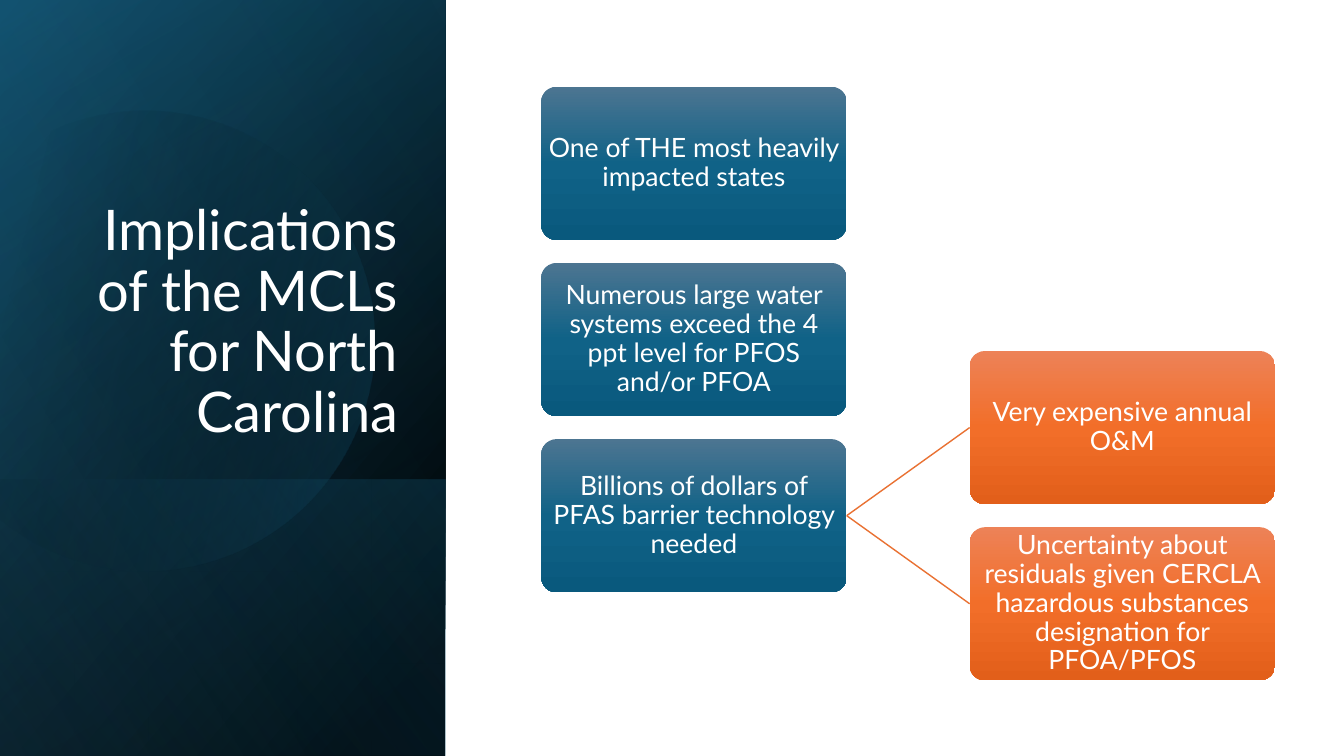
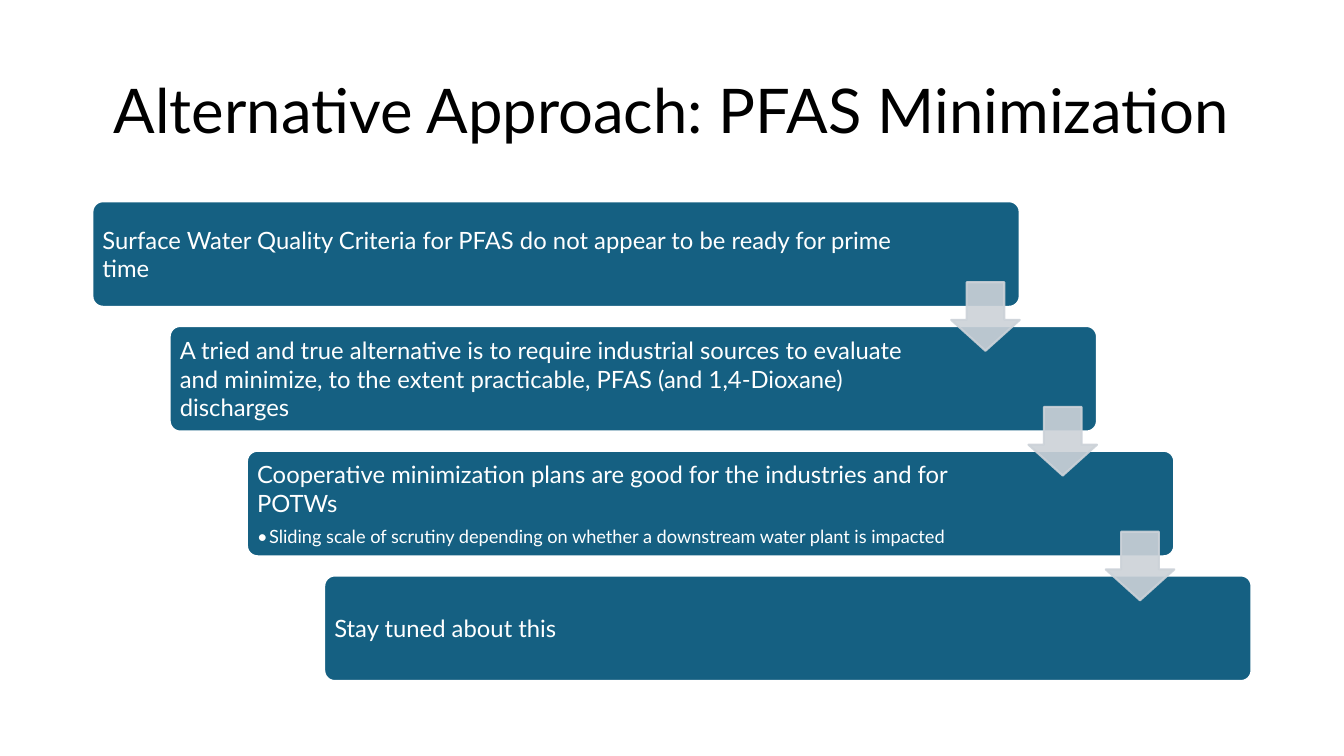
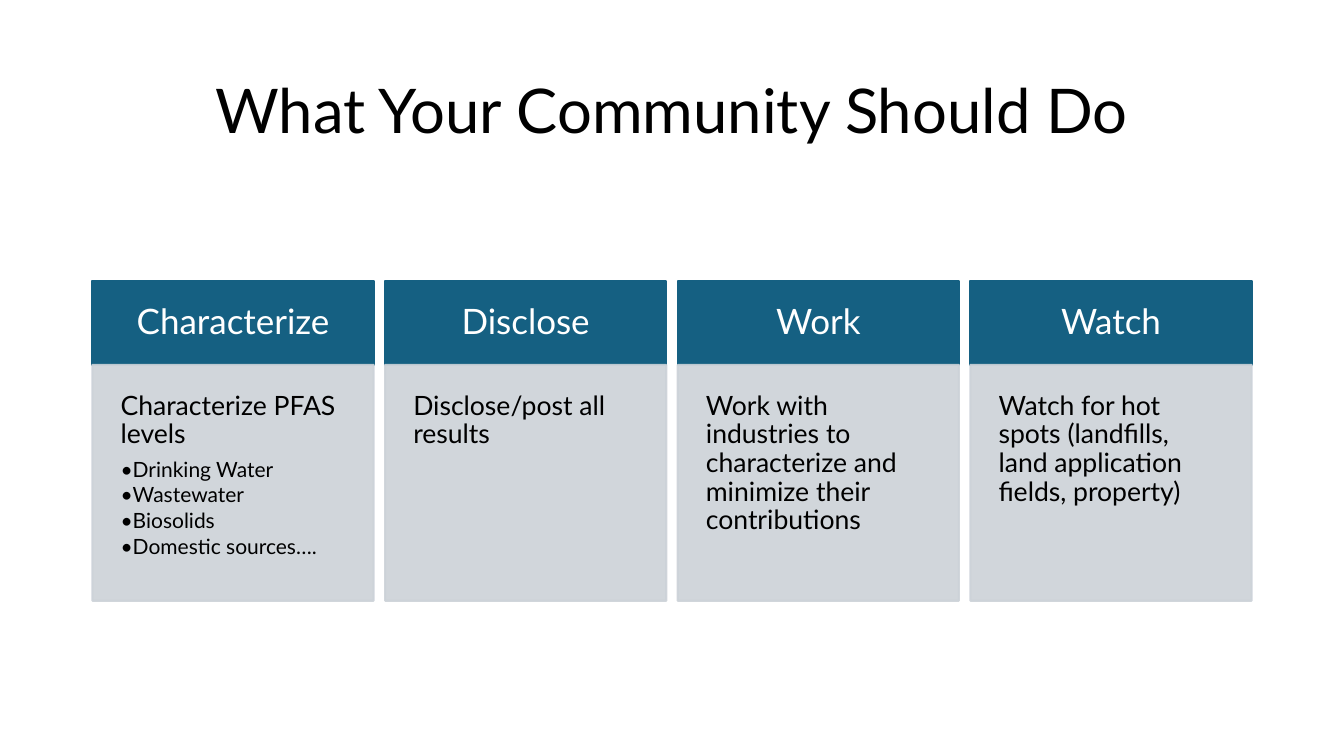
from dataclasses import dataclass

from lxml import etree
from pptx import Presentation
from pptx import oxml as ox
from pptx import util as u
from pptx.dml import color as col
from pptx.enum import shapes as sh
from pptx.enum import text as tx
from pptx.oxml import ns

ALIGN = {"l": tx.PP_ALIGN.LEFT, "c": tx.PP_ALIGN.CENTER, "r": tx.PP_ALIGN.RIGHT}
ANCHOR = {"t": tx.MSO_ANCHOR.TOP, "m": tx.MSO_ANCHOR.MIDDLE, "b": tx.MSO_ANCHOR.BOTTOM}
RECT = sh.MSO_SHAPE.RECTANGLE
ROUND = sh.MSO_SHAPE.ROUNDED_RECTANGLE
ARROW = sh.MSO_SHAPE.DOWN_ARROW
CHORD = sh.MSO_SHAPE.CHORD
WIDTH = 40 / 3
SPAN = 11.5
EDGE = (WIDTH - SPAN) / 2


@dataclass(frozen=True)
class Theme:
    font: str = "Lato"
    white: str = "FFFFFF"
    black: str = "000000"
    blue: str = "156082"
    navy: str = "104862"
    sky: str = "46B1E1"
    gray: str = "CCD2D8"
    orange: str = "E97132"
    blues: tuple = ((0, "4C7591"), (50, "106287"), (100, "09597D"))
    warms: tuple = ((0, "ED8257"), (50, "F26E29"), (100, "E25F1A"))
    title: int = 44
    side: int = 40
    head: int = 25
    body: int = 19
    step: int = 17
    sub: int = 15
    note: int = 13


T = Theme()


def rgb(code):
    return col.RGBColor.from_string(code)


def fade(fill, alpha):
    for clr in fill._xPr.iter(ns.qn("a:srgbClr")):
        etree.SubElement(clr, ns.qn("a:alpha")).set("val", str(alpha * 1000))


def blend(shape, stops, angle):
    shape.fill.background()
    marks = "".join(
        f'<a:gs pos="{pos * 1000}"><a:srgbClr val="{code}">'
        f'<a:alpha val="{(alpha[0] if alpha else 100) * 1000}"/></a:srgbClr></a:gs>'
        for pos, code, *alpha in stops)
    grad = ox.parse_xml(
        f'<a:gradFill {ns.nsdecls("a")} rotWithShape="1"><a:gsLst>{marks}</a:gsLst>'
        f'<a:lin ang="{angle * 60000}" scaled="0"/></a:gradFill>')
    props = shape._element.spPr
    props.replace(props.find(ns.qn("a:noFill")), grad)


def put(frame, text, size, color=T.white, align="l", space=None, after=0, bullet=False):
    para = frame.paragraphs[0]
    if para.runs:
        para = frame.add_paragraph()
    para.alignment = ALIGN[align]
    para.space_before = u.Pt(0)
    para.space_after = u.Pt(round(size * after, 2))
    if space:
        para.line_spacing = space
    if bullet:
        props = para._p.get_or_add_pPr()
        props.set("marL", str(u.Inches(0.12)))
        props.set("indent", str(-u.Inches(0.12)))
        etree.SubElement(props, ns.qn("a:buFont")).set("typeface", T.font)
        etree.SubElement(props, ns.qn("a:buChar")).set("char", "•")
    run = para.add_run()
    run.text = text
    run.font.name = T.font
    run.font.size = u.Pt(size)
    run.font.color.rgb = rgb(color)


class Deck:
    def __init__(self):
        self.file = Presentation()
        self.file.slide_width = u.Inches(WIDTH)
        self.file.slide_height = u.Inches(7.5)

    def page(self):
        self.slide = self.file.slides.add_slide(self.file.slide_layouts[5])

    def frame(self, shape, inset, anchor):
        frame = shape.text_frame
        frame.word_wrap = True
        frame.auto_size = tx.MSO_AUTO_SIZE.NONE
        frame.vertical_anchor = ANCHOR[anchor]
        (frame.margin_left, frame.margin_top,
         frame.margin_right, frame.margin_bottom) = map(u.Inches, inset)
        return frame

    def title(self, text, at=(EDGE, 0.4, SPAN, 1.45), size=T.title, color=T.black,
              align="c", anchor="m"):
        hold = self.slide.shapes.title
        hold.left, hold.top, hold.width, hold.height = map(u.Inches, at)
        self.slide.shapes._spTree.append(hold._element)
        put(self.frame(hold, (0.1, 0.05, 0.1, 0.05), anchor), text, size, color, align, 0.9)

    def paint(self, shape, fill, line=None, alpha=100, angle=90):
        shape.shadow.inherit = False
        if isinstance(fill, str):
            shape.fill.solid()
            shape.fill.fore_color.rgb = rgb(fill)
        else:
            blend(shape, fill, angle)
        if line:
            shape.line.color.rgb = rgb(line)
            shape.line.width = u.Pt(1.5)
        else:
            shape.line.fill.background()
        if alpha < 100:
            fade(shape.fill, alpha)
            if line:
                fade(shape.line.fill, alpha)

    def shape(self, kind, at, fill, adjust=(), **style):
        shape = self.slide.shapes.add_shape(kind, *map(u.Inches, at))
        for i, value in enumerate(adjust):
            shape.adjustments[i] = value
        self.paint(shape, fill, **style)
        return shape

    def box(self, kind, at, fill, inset, anchor="m", **style):
        return self.frame(self.shape(kind, at, fill, **style), inset, anchor)

    def panel(self, at, stops, angle):
        shape = self.shape(RECT, at, stops, angle=angle)
        shape.rotation = 90
        shape._element.spPr.xfrm.set("flipH", "1")

    def disc(self, x, y, radius, sweep, turn, stops, angle):
        ends = [(360 - sweep - turn) * 0.6, (sweep - turn) * 0.6]
        shape = self.shape(CHORD, (x - radius, y - radius, 2 * radius, 2 * radius),
                           stops, adjust=ends, angle=angle)
        shape.rotation = turn

    def link(self, *ends):
        line = self.slide.shapes.add_connector(
            sh.MSO_CONNECTOR.STRAIGHT, *map(u.Inches, ends))
        line.line.color.rgb = rgb(T.orange)
        line.line.width = u.Pt(1)
        etree.SubElement(line._element.spPr, ns.qn("a:effectLst"))


def impact(deck):
    deck.page()
    side = (-1.54, 1.54, 7.5, 4.42)
    deck.panel(side, [(8, T.black), (100, T.navy)], 50)
    deck.panel(side, [(0, T.black, 0), (99, T.blue, 46)], 30)
    deck.panel((0.84, 3.92, 2.74, 4.42), [(2, T.blue, 29), (100, T.black, 30)], 130)
    deck.disc(1.44, 3.38, 2.28, 134, -16, [(29, T.black, 0), (100, T.blue, 43)], 30)
    deck.panel(side, [(0, T.black, 0), (99, T.sky, 11)], 120)
    deck.title("Implications of the MCLs for North Carolina", (0.64, 1.84, 3.41, 2.62),
               T.side, T.white, "r", "b")

    wide, high, left, right, top = 3.03, 1.52, 5.37, 9.62, 0.86
    pitch = high * 1.15
    mid = top + 2 * pitch + high / 2

    def card(text, x, y, fill):
        frame = deck.box(ROUND, (x, y, wide, high), fill, (0.01,) * 4, adjust=(0.1,))
        put(frame, text, T.body, align="c", space=0.9, after=0.35)

    for i, text in enumerate([
            "One of THE most heavily impacted states",
            "Numerous large water systems exceed the 4 ppt level for PFOS and/or PFOA",
            "Billions of dollars of PFAS barrier technology needed"]):
        card(text, left, top + i * pitch, T.blues)
    for sign, text in [
            (-1, "Very expensive annual O&M"),
            (1, "Uncertainty about residuals given CERCLA hazardous substances "
                "designation for PFOA/PFOS")]:
        y = mid + sign * pitch / 2
        deck.link(left + wide, mid, right, y)
        card(text, right, y - high / 2, T.warms)


def steps(deck):
    deck.page()
    deck.title("Alternative Approach: PFAS Minimization")
    rows = [
        ("Surface Water Quality Criteria for PFAS do not appear to be ready for prime time",),
        ("A tried and true alternative is to require industrial sources to evaluate and "
         "minimize, to the extent practicable, PFAS (and 1,4-Dioxane) discharges",),
        ("Cooperative minimization plans are good for the industries and for POTWs",
         "Sliding scale of scrutiny depending on whether a downstream water plant is impacted"),
        ("Stay tuned about this",)]
    top, tall = 5.99 / 3, 4.76
    wide, high, size = SPAN * 0.8, tall * 0.22, 0.68
    over, down = (SPAN - wide) / 3, (tall - high) / 3
    for i, (lead, *notes) in enumerate(rows):
        inset = (0.07, 0.07, 1.52 if i else 1.23, 0.07)
        frame = deck.box(ROUND, (EDGE + i * over, top + i * down, wide, high), T.blue, inset,
                         adjust=(0.1,), line=T.white)
        put(frame, lead, T.step, after=0.35)
        for note in notes:
            put(frame, note, T.note, after=0.15, bullet=True)
    for i in range(len(rows) - 1):
        deck.shape(ARROW, (EDGE + wide - size + i * over, 2.8 + i * down, size, size), T.gray,
                   adjust=(0.55, 0.45), line=T.gray, alpha=90)


def tasks(deck):
    deck.page()
    deck.title("What Your Community Should Do")
    cards = [
        ("Characterize", "Characterize PFAS levels",
         "Drinking Water", "Wastewater", "Biosolids", "Domestic sources…."),
        ("Disclose", "Disclose/post all results"),
        ("Work", "Work with industries to characterize and minimize their contributions"),
        ("Watch", "Watch for hot spots (landfills, land application fields, property)")]
    wide = 2.79
    pitch = (SPAN - wide) / 3
    for i, (name, lead, *items) in enumerate(cards):
        x = EDGE + i * pitch
        head = deck.box(RECT, (x, 2.79, wide, 0.83), T.blue, (0.22,) * 4, line=T.blue)
        put(head, name, T.head, align="c", space=0.9, after=0.35)
        body = deck.box(RECT, (x, 3.62, wide, 2.34), T.gray, (0.28, 0.27, 0.27, 0.27), "t",
                        line=T.gray, alpha=90)
        put(body, lead, T.body, T.black, space=0.9, after=0.35)
        for item in items:
            put(body, item, T.sub, T.black, space=0.9, after=0.15, bullet=True)


def main():
    deck = Deck()
    impact(deck)
    steps(deck)
    tasks(deck)
    deck.file.save("out.pptx")


if __name__ == "__main__":
    main()
